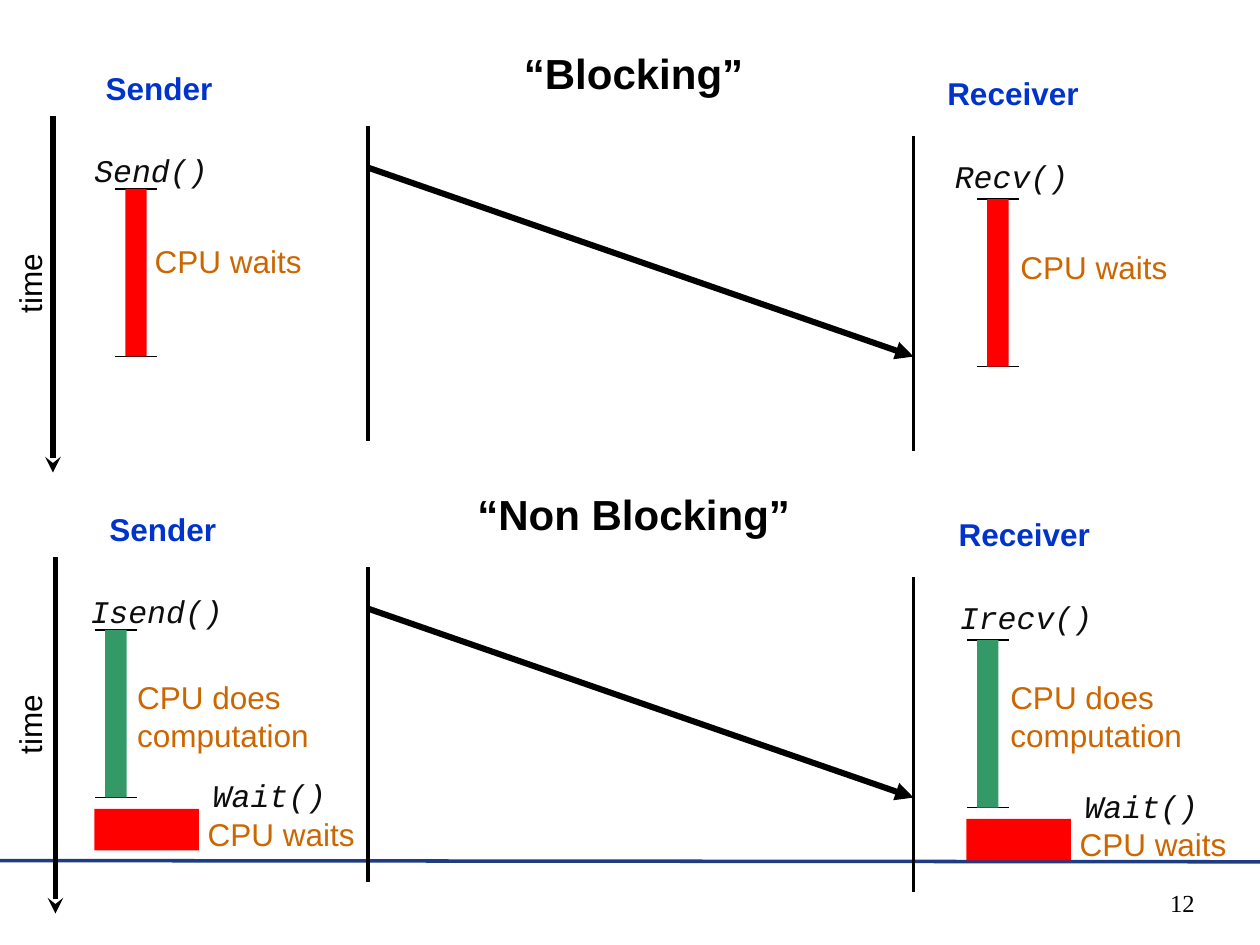
from lxml import etree
from pptx import Presentation
from pptx.dml.color import RGBColor
from pptx.enum.shapes import MSO_CONNECTOR, MSO_SHAPE
from pptx.enum.text import MSO_AUTO_SIZE, PP_ALIGN
from pptx.oxml.ns import qn
from pptx.util import Inches, Pt

STRAIGHT, RECT = MSO_CONNECTOR.STRAIGHT, MSO_SHAPE.RECTANGLE
FIT, RIGHT = MSO_AUTO_SIZE.SHAPE_TO_FIT_TEXT, PP_ALIGN.RIGHT
BLACK, CODE, BLUE, ORANGE = "000000", "0D0D0D", "0033CC", "CC6600"
RED, GREEN, NAVY = "FF0000", "339966", "1E3C82"
MONO = "Courier New"
BAR_W, BAR_H, CAP_W = 0.17, 1.33, 0.33
LANE_L, LANE_R, LANE_H = 2.92, 7.25, 2.5
PANEL_H = 3.5


def rgb(value):
    return RGBColor.from_string(value)


def add_line(s, x1, y1, x2, y2, width, color=BLACK, arrow=None):
    line = s.shapes.add_connector(STRAIGHT, Inches(x1), Inches(y1), Inches(x2), Inches(y2))
    line.line.color.rgb = rgb(color)
    line.line.width = Pt(width)
    if arrow:
        etree.SubElement(line.line._get_or_add_ln(), qn("a:tailEnd"), type=arrow)
    etree.SubElement(line._element.spPr, qn("a:effectLst"))


def add_rect(s, x, y, w, h, color):
    rect = s.shapes.add_shape(RECT, Inches(x), Inches(y), Inches(w), Inches(h))
    rect.shadow.inherit = False
    rect.fill.solid()
    rect.fill.fore_color.rgb = rgb(color)
    rect.line.fill.background()


def add_text(s, text, x, y, w, h=0.4, color=BLACK, size=18, font="Arial",
             bold=False, italic=False):
    box = s.shapes.add_textbox(Inches(x), Inches(y), Inches(w), Inches(h))
    tf = box.text_frame
    tf.word_wrap = False
    tf.auto_size = FIT
    tf.text = text
    for p in tf.paragraphs:
        for r in p.runs:
            r.font.name, r.font.size = font, Pt(size)
            r.font.bold, r.font.italic = bold, italic
            r.font.color.rgb = rgb(color)
    return box


def add_code(s, text, x, y, w=1.1):
    add_text(s, text, x, y, w, color=CODE, font=MONO, italic=True)


def add_span(s, center, top, color):
    """Bar with a cap at each end, showing how long an activity lasts."""
    add_line(s, center, top, center, top + BAR_H, 0.75)
    for y in (top + BAR_H, top):
        add_line(s, center - CAP_W / 2, y, center + CAP_W / 2, y, 0.75)
    add_rect(s, center - BAR_W / 2, top, BAR_W, BAR_H, color)


def add_wait(s, left, top, code_rise):
    """Block for the CPU waiting after the call to Wait()."""
    add_rect(s, left, top, 0.83, 0.33, RED)
    add_text(s, "CPU waits", left + 0.8, top, 1.37, color=ORANGE)
    add_code(s, "Wait()", left + 0.84, top - code_rise)


def add_panel(s, top, title, title_x, title_w, axis_x):
    """Title, time axis, both lanes and the message between them."""
    add_text(s, title, title_x, top + 0.33, title_w, 0.5, size=24, bold=True)
    add_line(s, axis_x, top + 0.92, axis_x, top + 3.75, 3, arrow="stealth")
    add_text(s, "time", -0.1, top + 2.05, 0.67).rotation = 270
    for x, y in ((LANE_L, top + 1), (LANE_R, top + 1.08)):
        add_line(s, x, y, x, y + LANE_H, 2.25)
    add_line(s, LANE_L, top + 1.33, LANE_R, top + 2.83, 3.5, arrow="triangle")


def add_party(s, top, name, name_box, call, call_box, center, span_top, color):
    """Heading, call and activity bar of the sender or the receiver."""
    x, y, w = name_box
    add_text(s, name, x, top + y, w, color=BLUE, bold=True)
    x, y, w = call_box
    add_code(s, call, x, top + y, w)
    add_span(s, center, top + span_top, color)


def add_blocking(s, top):
    add_panel(s, top, "“Blocking”", 4.06, 1.94, 0.42)
    add_party(s, top, "Sender", (0.74, 0.5, 1.05), "Send()", (0.65, 1.15, 1.1),
              1.08, 1.5, RED)
    add_party(s, top, "Receiver", (7.42, 0.54, 1.24), "Recv()", (7.48, 1.2, 1.1),
              7.92, 1.58, RED)
    for x, y in ((1.13, 1.87), (8, 1.92)):
        add_text(s, "CPU waits", x, top + y, 1.37, color=ORANGE)


def add_non_blocking(s, top):
    add_panel(s, top, "“Non Blocking”", 3.69, 2.68, 0.44)
    add_party(s, top, "Sender", (0.77, 0.5, 1.05), "Isend()", (0.62, 1.15, 1.25),
              0.92, 1.5, GREEN)
    add_party(s, top, "Receiver", (7.51, 0.54, 1.24), "Irecv()", (7.52, 1.2, 1.25),
              7.84, 1.58, GREEN)
    for x in (0.99, 7.92):
        add_text(s, "CPU does\ncomputation", x, top + 1.83, 1.56, 0.7, ORANGE)
    add_wait(s, 0.75, top + 2.92, 0.31)
    add_wait(s, 7.67, top + 3, 0.3)


def add_footer(s):
    add_line(s, 0, 6.83, 10, 6.84, 2, NAVY)
    box = add_text(s, "12", 7.5, 7, 2.08, 0.5, size=14, font="Times New Roman")
    tf = box.text_frame
    tf.word_wrap = True
    tf.auto_size = MSO_AUTO_SIZE.NONE
    tf.paragraphs[0].alignment = RIGHT


def main():
    prs = Presentation()
    prs.slide_width, prs.slide_height = Inches(10), Inches(7.5)
    s = prs.slides.add_slide(prs.slide_layouts[6])
    add_footer(s)
    add_blocking(s, 0)
    add_non_blocking(s, PANEL_H)
    prs.save("out.pptx")


if __name__ == "__main__":
    main()
